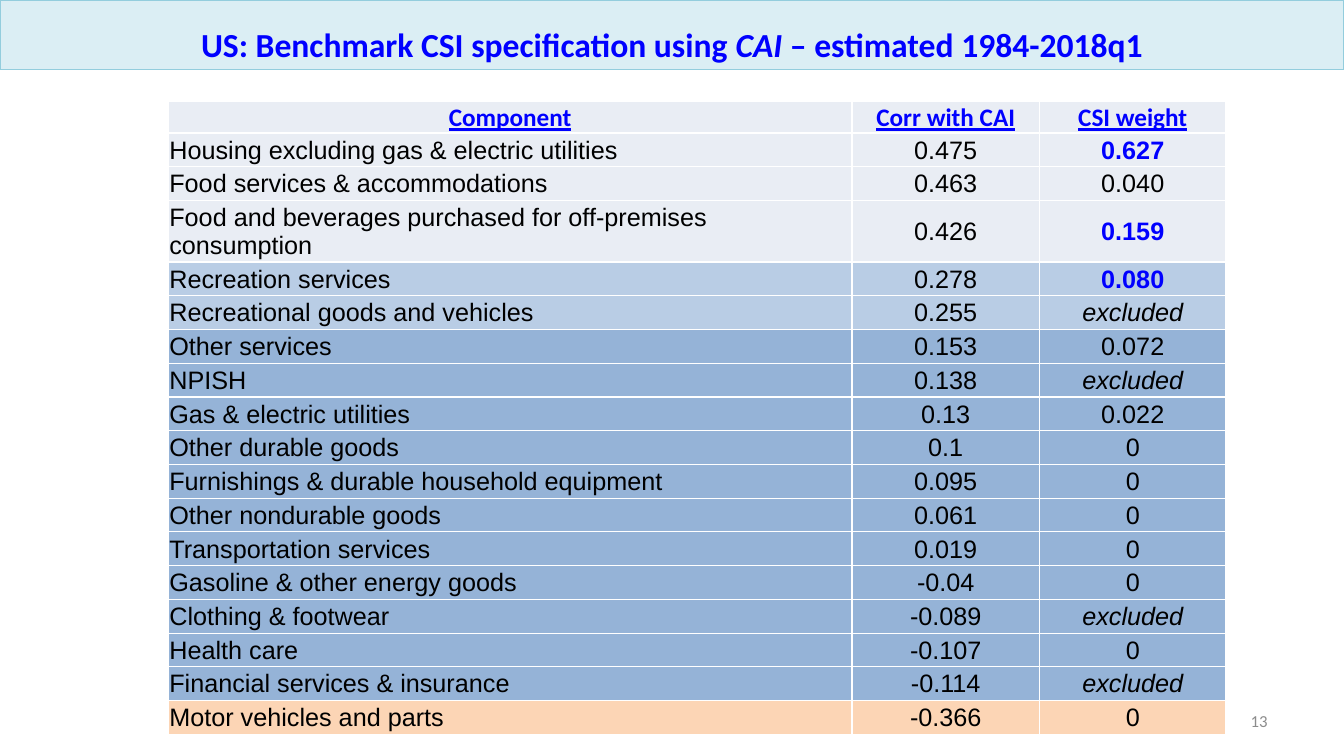
"""Build the slide on the benchmark CSI specification for the US."""
from lxml import etree
from pptx import Presentation
from pptx.dml.color import RGBColor
from pptx.enum.text import MSO_ANCHOR, MSO_AUTO_SIZE, PP_ALIGN
from pptx.oxml.ns import qn
from pptx.util import Inches, Pt

LEFT, CENTER, RIGHT = PP_ALIGN.LEFT, PP_ALIGN.CENTER, PP_ALIGN.RIGHT
MIDDLE, BOTTOM = MSO_ANCHOR.MIDDLE, MSO_ANCHOR.BOTTOM
BLUE, BLACK, GREY, WHITE = "0000FF", "000000", "8C8C8C", "FFFFFF"

TITLE = [
    ("US: Benchmark CSI specification using ", False),
    ("CAI", True),
    (" – estimated 1984-2018q1", False),
]
PAGE_NUMBER = "13"
HEADER = ("Component", "Corr with CAI", "CSI weight")
BANDS = [
    ("E9EDF4", [
        ("Housing excluding gas & electric utilities", "0.475", "0.627"),
        ("Food services & accommodations", "0.463", "0.040"),
        ("Food and beverages purchased for off-premises consumption", "0.426", "0.159"),
    ]),
    ("B9CDE5", [
        ("Recreation services", "0.278", "0.080"),
        ("Recreational goods and vehicles", "0.255", "excluded"),
    ]),
    ("95B3D7", [
        ("Other services", "0.153", "0.072"),
        ("NPISH", "0.138", "excluded"),
        ("Gas & electric utilities", "0.13", "0.022"),
        ("Other durable goods", "0.1", "0"),
        ("Furnishings & durable household equipment", "0.095", "0"),
        ("Other nondurable goods", "0.061", "0"),
        ("Transportation services", "0.019", "0"),
        ("Gasoline & other energy goods", "-0.04", "0"),
        ("Clothing & footwear", "-0.089", "excluded"),
        ("Health care", "-0.107", "0"),
        ("Financial services & insurance", "-0.114", "excluded"),
    ]),
    ("FCD5B5", [("Motor vehicles and parts", "-0.366", "0")]),
]
KEY_WEIGHTS = {"0.627", "0.159", "0.080"}

SLIDE_WIDTH, SLIDE_HEIGHT = 13.33, 7.5
TITLE_HEIGHT = 0.69
TABLE_LEFT, TABLE_TOP, TABLE_HEIGHT = 1.67, 1.01, 6.1
COLUMN_WIDTHS = (6.78, 1.86, 1.85)
HEADER_HEIGHT, TALL_HEIGHT, TALL_ROW = 0.3, 0.44, 3


def color(value):
    """Turn a hex string into a colour."""
    return RGBColor.from_string(value)


def add_text(para, text, size=18, font="Arial", ink=BLACK, bold=False,
             italic=False, underline=False, align=LEFT):
    """Add one formatted span to a paragraph."""
    para.alignment = align
    span = para.add_run()
    span.text = text
    span.font.size, span.font.name = Pt(size), font
    span.font.bold, span.font.italic, span.font.underline = bold, italic, underline
    span.font.color.rgb = color(ink)


def add_borders(cell):
    """Draw a thin white line on all four sides of a cell."""
    properties = cell._tc.get_or_add_tcPr()
    for side in ("a:lnL", "a:lnR", "a:lnT", "a:lnB"):
        line = etree.SubElement(properties, qn(side), w=str(Pt(1)))
        fill = etree.SubElement(line, qn("a:solidFill"))
        etree.SubElement(fill, qn("a:srgbClr"), val=WHITE)


def fill_cell(cell, text, band, **style):
    """Set the text, margins, borders and fill of a cell."""
    cell.vertical_anchor = MIDDLE
    cell.margin_left = cell.margin_right = cell.margin_top = Inches(0.01)
    cell.margin_bottom = 0
    add_borders(cell)
    cell.fill.solid()
    cell.fill.fore_color.rgb = color(band)
    add_text(cell.text_frame.paragraphs[0], text, **style)


def add_title(page):
    """Format the title placeholder as a band across the top."""
    box = page.shapes.title
    box.left, box.top = 0, 0
    box.width, box.height = Inches(SLIDE_WIDTH), Inches(TITLE_HEIGHT)
    box.fill.solid()
    box.fill.fore_color.rgb = color("DBEEF4")
    box.line.color.rgb = color("93CDDD")
    box.line.width = 0
    frame = box.text_frame
    frame.auto_size = MSO_AUTO_SIZE.NONE
    frame.word_wrap = True
    frame.vertical_anchor = BOTTOM
    for text, italic in TITLE:
        add_text(frame.paragraphs[0], text, size=24, font="Calibri", ink=BLUE,
                 bold=True, italic=italic, align=CENTER)


def add_components(page):
    """Add the table of components, correlations and weights."""
    rows = [(band, row) for band, group in BANDS for row in group]
    row_height = (TABLE_HEIGHT - HEADER_HEIGHT - TALL_HEIGHT) / (len(rows) - 1)
    table = page.shapes.add_table(
        len(rows) + 1, len(HEADER), Inches(TABLE_LEFT), Inches(TABLE_TOP),
        Inches(sum(COLUMN_WIDTHS)), Inches(TABLE_HEIGHT)).table
    for column, width in zip(table.columns, COLUMN_WIDTHS):
        column.width = Inches(width)
    for row in table.rows:
        row.height = Inches(row_height)
    table.rows[0].height = Inches(HEADER_HEIGHT)
    table.rows[TALL_ROW].height = Inches(TALL_HEIGHT)
    for index, text in enumerate(HEADER):
        fill_cell(table.cell(0, index), text, BANDS[0][0], font="Calibri", ink=BLUE,
                  bold=True, underline=True, align=CENTER)
    for number, (band, row) in enumerate(rows, 1):
        for index, text in enumerate(row):
            key = text in KEY_WEIGHTS
            fill_cell(table.cell(number, index), text, band, bold=key,
                      ink=BLUE if key else BLACK, italic=text == "excluded",
                      align=CENTER if index else LEFT)


def add_page_number(page):
    """Add the page number at the lower right."""
    box = page.shapes.add_textbox(Inches(9.56), Inches(6.95), Inches(3.11), Inches(0.4))
    box.text_frame.word_wrap = True
    box.text_frame.vertical_anchor = MIDDLE
    add_text(box.text_frame.paragraphs[0], PAGE_NUMBER, size=12, font="Calibri",
             ink=GREY, align=RIGHT)


def main():
    """Build and save the deck."""
    deck = Presentation()
    deck.slide_width, deck.slide_height = Inches(SLIDE_WIDTH), Inches(SLIDE_HEIGHT)
    page = deck.slides.add_slide(deck.slide_layouts[5])
    add_page_number(page)
    add_title(page)
    add_components(page)
    deck.save("out.pptx")


if __name__ == "__main__":
    main()
